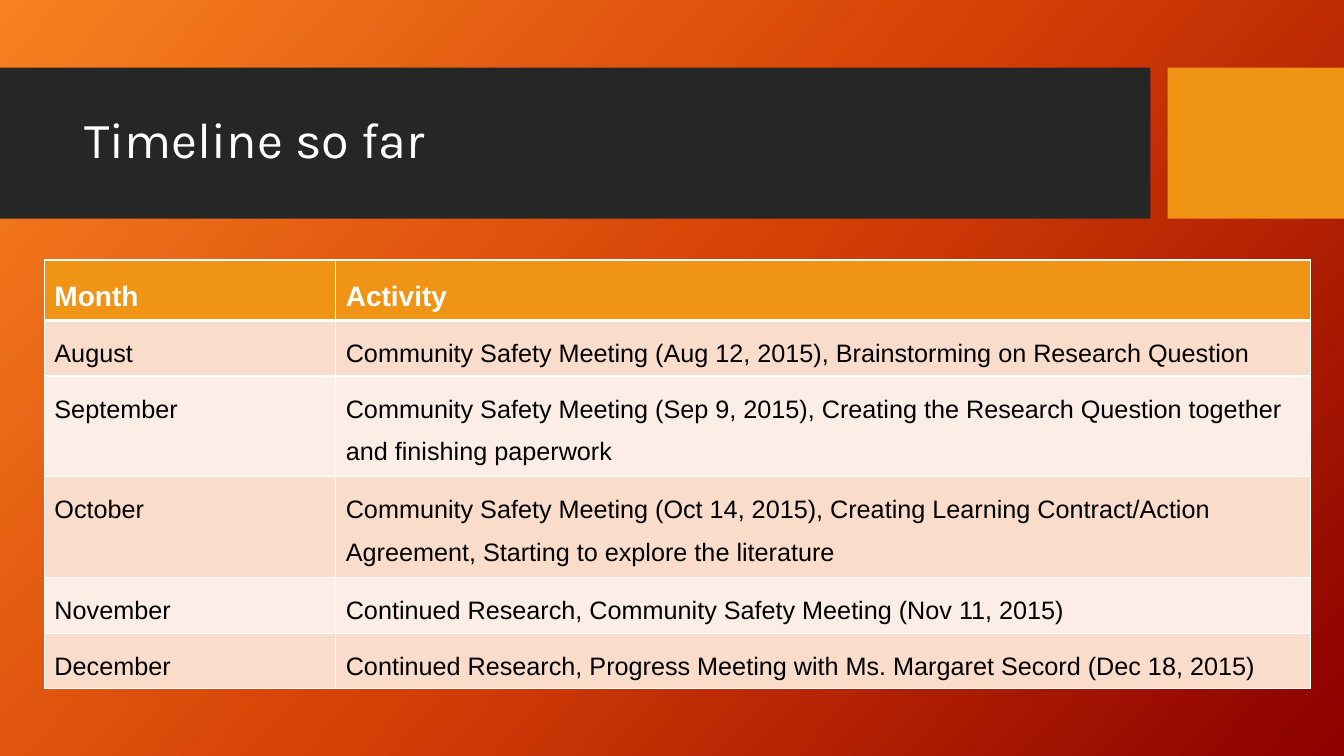
from copy import deepcopy

from lxml import etree
from pptx import Presentation
from pptx import util as u
from pptx.dml.color import RGBColor
from pptx.enum import shapes, text
from pptx.oxml.ns import qn

TITLE = "Timeline so far"
HEADER = ("Month", "Activity")
TIMELINE = [
    ("August", "Community Safety Meeting (Aug 12, 2015), Brainstorming on Research Question"),
    ("September", "Community Safety Meeting (Sep 9, 2015), Creating the Research Question together and finishing paperwork"),
    ("October", "Community Safety Meeting (Oct 14, 2015), Creating Learning Contract/Action Agreement, Starting to explore the literature"),
    ("November", "Continued Research, Community Safety Meeting (Nov 11, 2015)"),
    ("December", "Continued Research, Progress Meeting with Ms. Margaret Secord (Dec 18, 2015)"),
]
COLORS = {
    "band": "262626", "accent": "F09415", "white": "FFFFFF", "black": "000000",
    "odd row": "F9DCCA", "even row": "FCEEE7",
}
BACKGROUND_STOPS = [(0, "F78121"), (0.5, "D54006"), (1, "8C0000")]
BACKGROUND_ANGLE = 42
FONTS = {
    "title": {"name": "Karla", "size": u.Pt(36), "bold": False, "color": "white"},
    "header": {"name": "Arial", "size": u.Pt(20), "bold": True, "color": "white"},
    "body": {"name": "Arial", "size": u.Pt(18), "bold": False, "color": "black"},
}
SLIDE_WIDTH, SLIDE_HEIGHT = 13.33, 7.5
BAND_TOP, BAND_HEIGHT = 0.67, 1.5
BANDS = [(0, 11.41, "band"), (11.58, 1.75, "accent")]
TITLE_BOX = (0.74, 0.82, 10.51, 1.18)
TABLE_LEFT, TABLE_TOP = 0.44, 2.58
COLUMN_WIDTHS = (2.89, 9.67)
ROW_HEIGHT = 0.41


def rgb(name):
    return RGBColor.from_string(COLORS[name])


def write(paragraph, content, style, line_spacing):
    paragraph.line_spacing = line_spacing
    run = paragraph.add_run()
    run.text = content
    for attribute, value in FONTS[style].items():
        if attribute == "color":
            run.font.color.rgb = rgb(value)
        else:
            setattr(run.font, attribute, value)


def paint_background(slide):
    fill = slide.background.fill
    fill.gradient()
    fill.gradient_angle = 360 - BACKGROUND_ANGLE
    stop_list = slide.element.find(".//" + qn("a:gsLst"))
    stop_list.append(deepcopy(stop_list[-1]))
    for stop, (position, color) in zip(fill.gradient_stops, BACKGROUND_STOPS):
        stop.position = position
        stop.color.rgb = RGBColor.from_string(color)


def add_borders(cell, widths):
    properties = cell._tc.get_or_add_tcPr()
    for index, (side, width) in enumerate(widths.items()):
        line = etree.Element(qn("a:ln" + side), w=str(u.Pt(width)))
        fill = etree.SubElement(line, qn("a:solidFill"))
        etree.SubElement(fill, qn("a:srgbClr"), val=COLORS["white"])
        properties.insert(index, line)


def add_title(slide):
    for left, width, color in BANDS:
        band = slide.shapes.add_shape(
            shapes.MSO_SHAPE.RECTANGLE,
            *map(u.Inches, (left, BAND_TOP, width, BAND_HEIGHT)))
        band.shadow.inherit = False
        band.fill.solid()
        band.fill.fore_color.rgb = rgb(color)
        band.line.fill.background()
    frame = slide.shapes.add_textbox(*map(u.Inches, TITLE_BOX)).text_frame
    frame.word_wrap = True
    frame.vertical_anchor = text.MSO_ANCHOR.MIDDLE
    write(frame.paragraphs[0], TITLE, "title", 0.9)


def add_timeline(slide):
    rows = [HEADER] + TIMELINE
    table = slide.shapes.add_table(
        len(rows), len(HEADER),
        *map(u.Inches, (TABLE_LEFT, TABLE_TOP, sum(COLUMN_WIDTHS), ROW_HEIGHT * len(rows)))).table
    for column, width in zip(table.columns, COLUMN_WIDTHS):
        column.width = u.Inches(width)
    for row_index, row in enumerate(rows):
        table.rows[row_index].height = u.Inches(ROW_HEIGHT)
        is_header = row_index == 0
        color = "accent" if is_header else "odd row" if row_index % 2 else "even row"
        for column_index, content in enumerate(row):
            cell = table.cell(row_index, column_index)
            cell.fill.solid()
            cell.fill.fore_color.rgb = rgb(color)
            add_borders(cell, {"L": 1, "R": 1, "T": 3 if row_index == 1 else 1,
                               "B": 3 if is_header else 1})
            write(cell.text_frame.paragraphs[0], content,
                  "header" if is_header else "body", 1.5)


def main():
    presentation = Presentation()
    presentation.slide_width = u.Inches(SLIDE_WIDTH)
    presentation.slide_height = u.Inches(SLIDE_HEIGHT)
    slide = presentation.slides.add_slide(presentation.slide_layouts[6])
    paint_background(slide)
    add_title(slide)
    add_timeline(slide)
    presentation.save("out.pptx")


if __name__ == "__main__":
    main()
